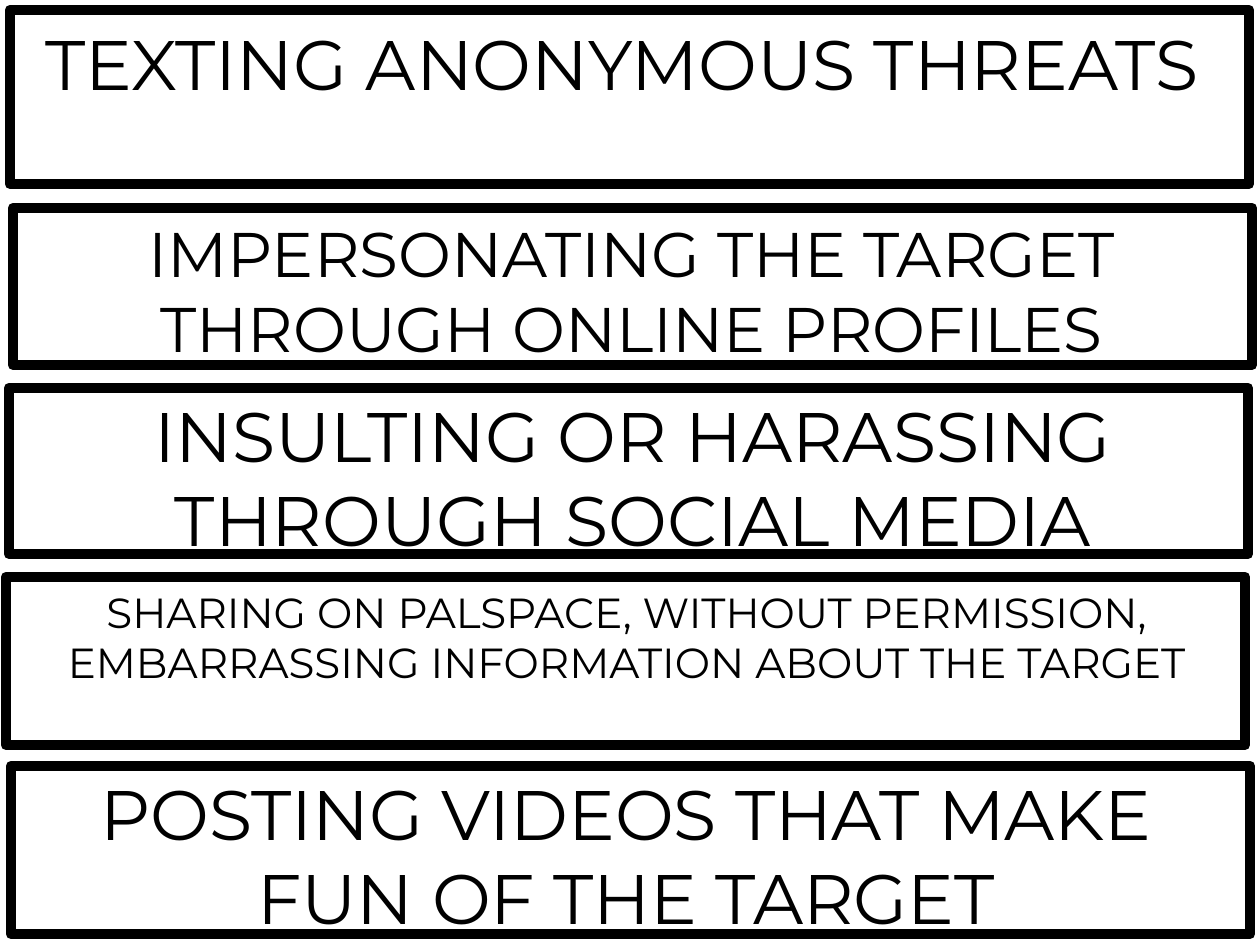
from pptx import Presentation
from pptx import util as u
from pptx.dml.color import RGBColor
from pptx.enum import shapes, text

# Content: wording, font size, frame (left, top, width, height), text box, in px
BANNERS = [
    ("TEXTING ANONYMOUS THREATS", 40,
     (10, 10, 1239, 174), (8, 14, 1228, 220)),
    ("IMPERSONATING THE TARGET THROUGH ONLINE PROFILES", 36,
     (13, 208, 1239, 157), (14, 208, 1235, 165)),
    ("INSULTING OR HARASSING THROUGH SOCIAL MEDIA", 40,
     (9, 388, 1239, 166), (20, 386, 1226, 183)),
    ("SHARING ON PALSPACE, WITHOUT PERMISSION, EMBARRASSING INFORMATION ABOUT THE TARGET", 24,
     (6, 577, 1239, 168), (9, 580, 1235, 165)),
    ("POSTING VIDEOS THAT MAKE FUN OF THE TARGET", 40,
     (11, 766, 1239, 168), (13, 764, 1226, 183)),
]
COLORS = {"paper": "FFFFFF", "ink": "000000"}
FONT = "Montserrat"
FRAME_LINE = 6
PX = u.Inches(1) / 126


def px(*values):
    return [u.Emu(round(value * PX)) for value in values]


def color(name):
    return RGBColor.from_string(COLORS[name])


def add_frame(slide, box):
    shape = slide.shapes.add_shape(shapes.MSO_SHAPE.RECTANGLE, *px(*box))
    shape.shadow.inherit = False
    shape.fill.solid()
    shape.fill.fore_color.rgb = color("paper")
    shape.line.color.rgb = color("ink")
    shape.line.width = u.Pt(FRAME_LINE)


def add_text(slide, words, box, size, font=FONT, ink="ink", align=text.PP_ALIGN.CENTER):
    frame = slide.shapes.add_textbox(*px(*box)).text_frame
    frame.word_wrap = True
    frame.auto_size = text.MSO_AUTO_SIZE.SHAPE_TO_FIT_TEXT
    paragraph = frame.paragraphs[0]
    paragraph.alignment = align
    run = paragraph.add_run()
    run.text = words
    run.font.name = font
    run.font.size = u.Pt(size)
    run.font.color.rgb = color(ink)


def main():
    presentation = Presentation()
    presentation.slide_width, presentation.slide_height = px(1260, 945)
    slide = presentation.slides.add_slide(presentation.slide_layouts[6])

    # Frames lie behind all of the wording
    for _, _, frame_box, _ in BANNERS:
        add_frame(slide, frame_box)
    for words, size, _, text_box in BANNERS:
        add_text(slide, words, text_box, size)

    presentation.save("out.pptx")


if __name__ == "__main__":
    main()
